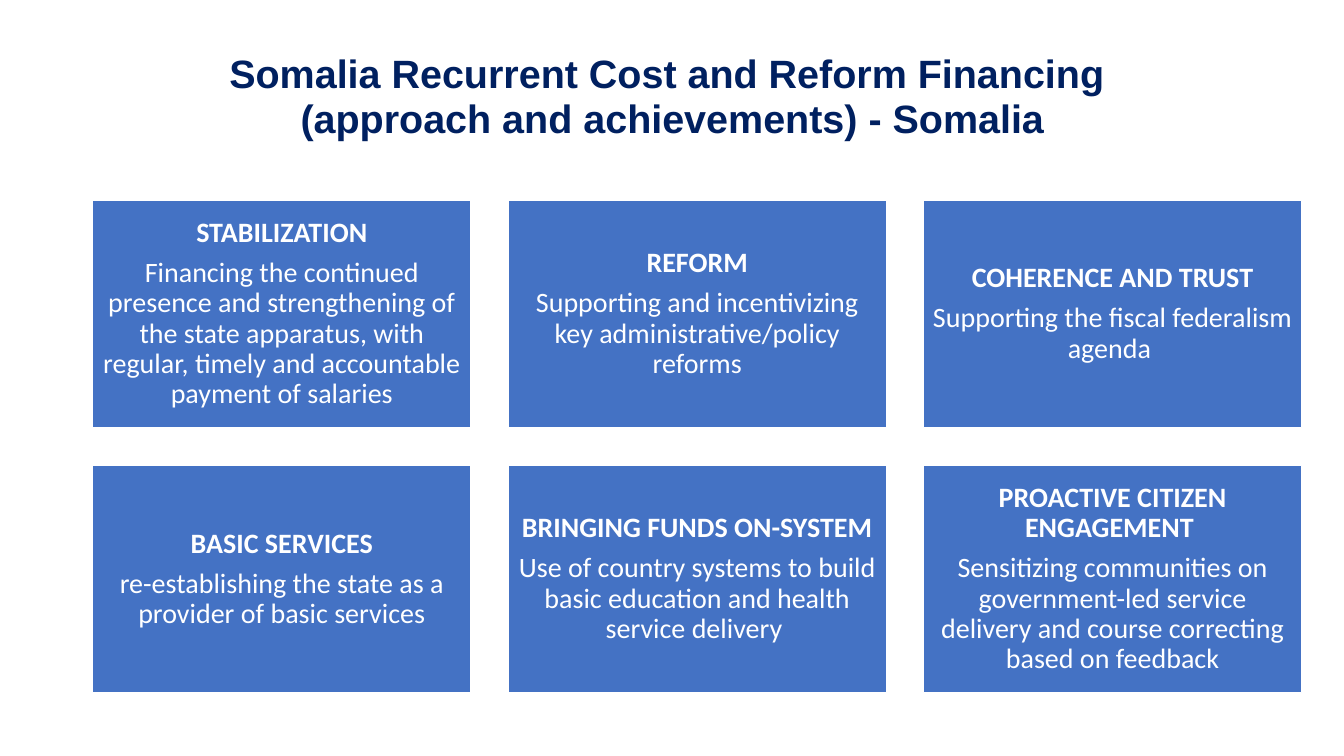
import pptx
import pptx.dml.color
import pptx.enum.shapes
import pptx.enum.text
import pptx.util

THEMES = [
    ("STABILIZATION", "Financing the continued presence and strengthening of the state "
     "apparatus, with regular, timely and accountable payment of salaries"),
    ("REFORM", "Supporting and incentivizing key administrative/policy reforms"),
    ("COHERENCE AND TRUST", "Supporting the fiscal federalism agenda "),
    ("BASIC SERVICES", "re-establishing the state as a provider of basic services"),
    ("BRINGING FUNDS ON-SYSTEM", "Use of country systems to build basic education and "
     "health service delivery "),
    ("PROACTIVE CITIZEN ENGAGEMENT ", "Sensitizing communities on government-led service "
     "delivery and course correcting based on feedback"),
]


def color(hex_string):
    return pptx.dml.color.RGBColor.from_string(hex_string)


class ThemeSlide:
    """Holds the style and the slide; cards sit on a grid of equal columns and rows."""

    NAVY, BLUE, WHITE = "002060", "4472C4", "FFFFFF"
    TITLE_FONT, CARD_FONT = "Arial", "Calibri"
    LEFT, TOP = 0.92, 1.99
    CARD_WIDTH, CARD_HEIGHT = 3.75, 2.25
    COLUMN_STEP, ROW_STEP = 4.12, 2.63
    COLUMNS = 3

    def __init__(self, presentation):
        title_only = presentation.slide_layouts[5]
        self.slide = presentation.slides.add_slide(title_only)

    def format_frame(self, frame, inset):
        frame.word_wrap = True
        frame.auto_size = pptx.enum.text.MSO_AUTO_SIZE.NONE
        frame.vertical_anchor = pptx.enum.text.MSO_ANCHOR.MIDDLE
        frame.margin_left = frame.margin_right = pptx.util.Inches(inset)
        frame.margin_top = frame.margin_bottom = pptx.util.Inches(min(inset, 0.08))

    def format_paragraph(self, paragraph, line_spacing, space_after=0):
        paragraph.alignment = pptx.enum.text.PP_ALIGN.CENTER
        paragraph.line_spacing = line_spacing
        paragraph.space_after = pptx.util.Pt(space_after)

    def add_run(self, paragraph, text, font_name, size, hex_string, bold):
        run = paragraph.add_run()
        run.text = text
        run.font.name = font_name
        run.font.size = pptx.util.Pt(size)
        run.font.color.rgb = color(hex_string)
        run.font.bold = bold

    def set_title(self, lines):
        title = self.slide.shapes.title
        title.left, title.top = pptx.util.Inches(self.LEFT), pptx.util.Inches(0.4)
        title.width, title.height = pptx.util.Inches(11.5), pptx.util.Inches(1.14)
        self.format_frame(title.text_frame, 0.1)
        paragraph = title.text_frame.paragraphs[0]
        self.format_paragraph(paragraph, 0.95)
        for index, line in enumerate(lines):
            if index:
                paragraph.add_line_break()
            self.add_run(paragraph, line, self.TITLE_FONT, 28.2, self.NAVY, True)

    def add_card(self, index, heading, description):
        row, column = divmod(index, self.COLUMNS)
        card = self.slide.shapes.add_shape(
            pptx.enum.shapes.MSO_SHAPE.RECTANGLE,
            pptx.util.Inches(self.LEFT + column * self.COLUMN_STEP),
            pptx.util.Inches(self.TOP + row * self.ROW_STEP),
            pptx.util.Inches(self.CARD_WIDTH),
            pptx.util.Inches(self.CARD_HEIGHT),
        )
        card.shadow.inherit = False
        card.fill.solid()
        card.fill.fore_color.rgb = color(self.BLUE)
        card.line.color.rgb = color(self.WHITE)
        card.line.width = pptx.util.Pt(1)
        frame = card.text_frame
        self.format_frame(frame, 0.08)
        heading_paragraph = frame.paragraphs[0]
        description_paragraph = frame.add_paragraph()
        for paragraph, text, bold in (
            (heading_paragraph, heading, True),
            (description_paragraph, description, False),
        ):
            self.format_paragraph(paragraph, 0.9, space_after=7)
            self.add_run(paragraph, text, self.CARD_FONT, 20, self.WHITE, bold)


def main():
    presentation = pptx.Presentation()
    presentation.slide_width = pptx.util.Inches(13.33)
    presentation.slide_height = pptx.util.Inches(7.5)
    theme_slide = ThemeSlide(presentation)
    theme_slide.set_title([
        "Somalia Recurrent Cost and Reform Financing ",
        "(approach and achievements) - Somalia",
    ])
    for index, (heading, description) in enumerate(THEMES):
        theme_slide.add_card(index, heading, description)
    presentation.save("out.pptx")


if __name__ == "__main__":
    main()
